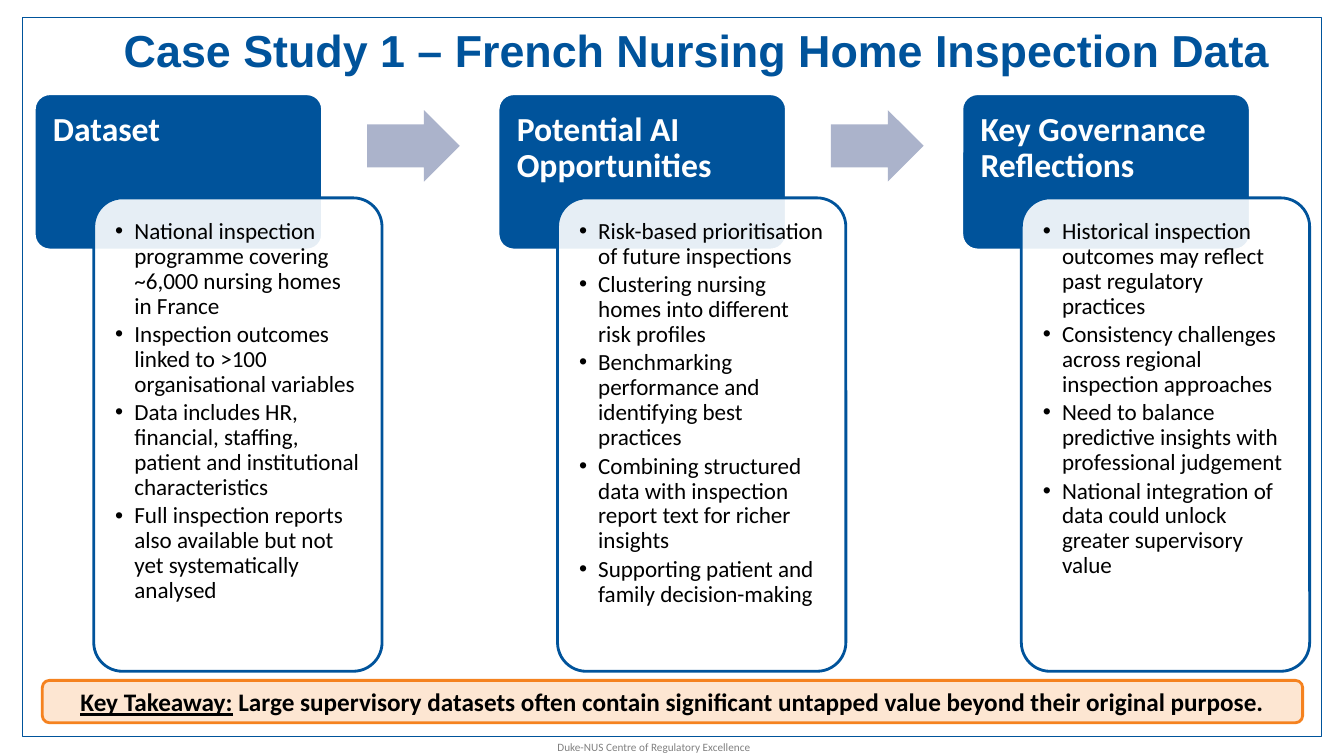
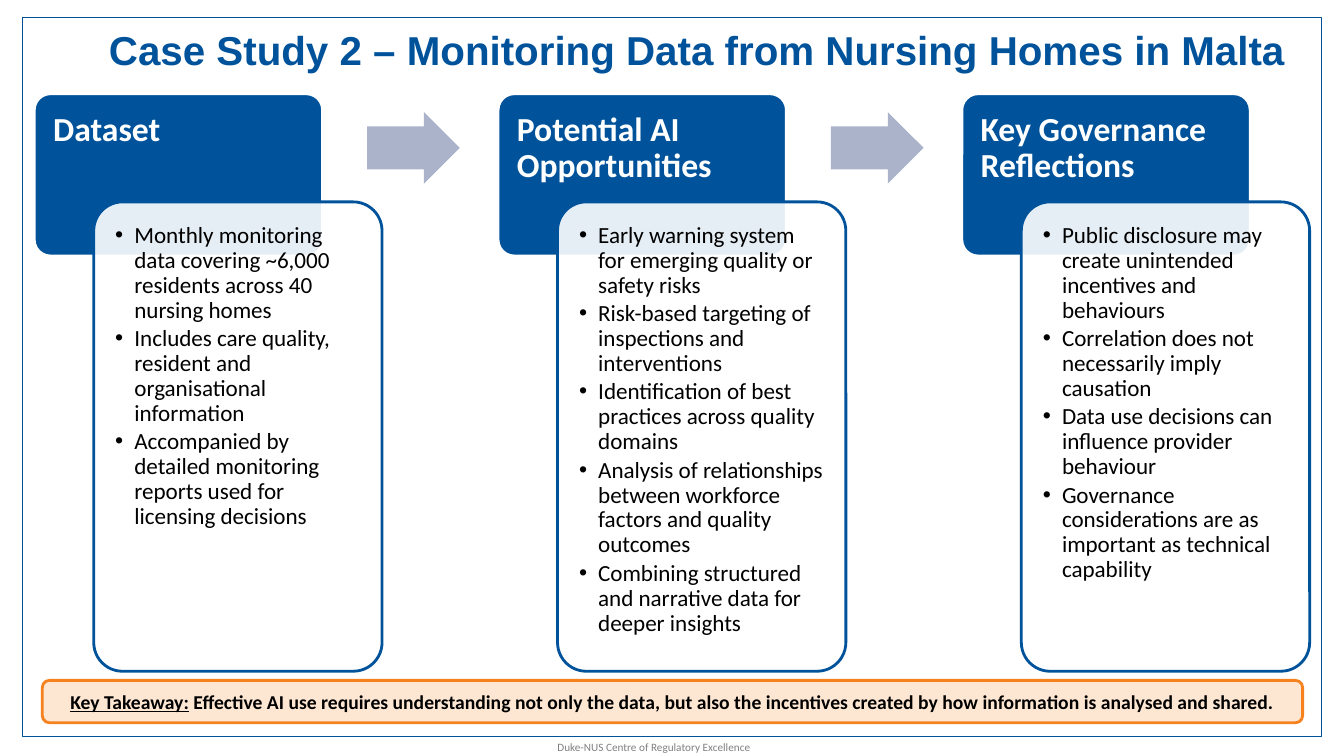
from dataclasses import dataclass

from lxml import etree
from pptx import Presentation
from pptx.dml.color import RGBColor
from pptx.enum.shapes import MSO_SHAPE
from pptx.enum.text import MSO_ANCHOR, PP_ALIGN
from pptx.oxml.ns import qn
from pptx.util import Inches, Pt

RECT, ROUND, ARROW = (MSO_SHAPE.RECTANGLE, MSO_SHAPE.ROUNDED_RECTANGLE,
                      MSO_SHAPE.RIGHT_ARROW)
TOP, MIDDLE = MSO_ANCHOR.TOP, MSO_ANCHOR.MIDDLE
LEFT, CENTER = PP_ALIGN.LEFT, PP_ALIGN.CENTER


@dataclass(frozen=True)
class Theme:
    blue: str = "00539B"
    white: str = "FFFFFF"
    black: str = "000000"
    gray: str = "808080"
    arrow: str = "ABB3CB"
    peach: str = "FDE6D2"
    orange: str = "F5821F"
    title_font: str = "Arial"
    font: str = "Calibri"
    head: float = 24
    body: float = 16.5
    foot: float = 8


T = Theme()
FOOTER = "Duke-NUS Centre of Regulatory Excellence"
LEAD = "Key Takeaway:"
HEADS = ["Dataset", "Potential AI Opportunities", "Key Governance Reflections"]

CASES = [
    {
        "title": "Case Study 1 – French Nursing Home Inspection Data",
        "title_size": 32,
        "head_height": 1.55,
        "points": [
            ["National inspection programme covering ~6,000 nursing homes in France",
             "Inspection outcomes linked to >100 organisational variables",
             "Data includes HR, financial, staffing, patient and institutional characteristics",
             "Full inspection reports also available but not yet systematically analysed"],
            ["Risk-based prioritisation of future inspections",
             "Clustering nursing homes into different risk profiles",
             "Benchmarking performance and identifying best practices",
             "Combining structured data with inspection report text for richer insights",
             "Supporting patient and family decision-making"],
            ["Historical inspection outcomes may reflect past regulatory practices",
             "Consistency challenges across regional inspection approaches",
             "Need to balance predictive insights with professional judgement",
             "National integration of data could unlock greater supervisory value"],
        ],
        "takeaway": "Large supervisory datasets often contain significant untapped "
                    "value beyond their original purpose.",
        "takeaway_size": 18,
    },
    {
        "title": "Case Study 2 – Monitoring Data from Nursing Homes in Malta",
        "title_size": 28.8,
        "head_height": 1.61,
        "points": [
            ["Monthly monitoring data covering ~6,000 residents across 40 nursing homes",
             "Includes care quality, resident and organisational information",
             "Accompanied by detailed monitoring reports used for licensing decisions"],
            ["Early warning system for emerging quality or safety risks",
             "Risk-based targeting of inspections and interventions",
             "Identification of best practices across quality domains",
             "Analysis of relationships between workforce factors and quality outcomes",
             "Combining structured and narrative data for deeper insights"],
            ["Public disclosure may create unintended incentives and behaviours",
             "Correlation does not necessarily imply causation",
             "Data use decisions can influence provider behaviour",
             "Governance considerations are as important as technical capability"],
        ],
        "takeaway": "Effective AI use requires understanding not only the data, but also "
                    "the incentives created by how information is analysed and shared.",
        "takeaway_size": 14,
    },
]

CARD_LEFT, CARD_TOP, CARD_BOTTOM = 0.34, 0.93, 6.66
CARD_WIDTH, PITCH, SHIFT = 2.86, 4.6, 0.59
ARROW_GAP, ARROW_WIDTH, ARROW_HEIGHT = 0.44, 0.92, 0.71
INDENT = 0.19


def rgb(code):
    return RGBColor.from_string(code)


def add_box(slide, kind, at, fill=None, line=None, width=2):
    box = slide.shapes.add_shape(kind, *map(Inches, at))
    box.shadow.inherit = False
    if fill:
        box.fill.solid()
        box.fill.fore_color.rgb = rgb(fill)
    else:
        box.fill.background()
    if line:
        box.line.color.rgb = rgb(line)
        box.line.width = Pt(width)
    else:
        box.line.fill.background()
    return box


def set_frame(shape, anchor, pads=None, wrap=True):
    """Set anchor, wrapping and (left, top, right, bottom) insets."""
    frame = shape.text_frame
    frame.word_wrap = wrap
    frame.vertical_anchor = anchor
    if pads:
        (frame.margin_left, frame.margin_top,
         frame.margin_right, frame.margin_bottom) = map(Inches, pads)
    return frame


def style(para, size, color, bold=False, align=LEFT, name=T.font):
    para.alignment = align
    font = para.font
    font.name, font.size, font.bold = name, Pt(size), bold
    font.color.rgb = rgb(color)


def add_label(slide, text, at, anchor, wrap, **look):
    box = slide.shapes.add_textbox(*map(Inches, at))
    para = set_frame(box, anchor, wrap=wrap).paragraphs[0]
    para.text = text
    style(para, **look)


def set_alpha(shape, percent):
    color = shape.fill._xPr.find(qn("a:solidFill"))[0]
    etree.SubElement(color, qn("a:alpha")).set("val", str(percent * 1000))


def add_bullet(para):
    props = para._p.get_or_add_pPr()
    props.set("marL", str(Inches(INDENT)))
    props.set("indent", str(-Inches(INDENT)))
    etree.SubElement(props, qn("a:buFont")).set("typeface", "Arial")
    etree.SubElement(props, qn("a:buChar")).set("char", "•")


def add_base(slide, title, size):
    """Draw the border, footer and title shared by all slides."""
    add_box(slide, RECT, (0.22, 0.17, 12.89, 7.14), line=T.blue, width=0.75)
    add_label(slide, FOOTER, (5.43, 7.3, 2.14, 0.24), TOP, False,
              size=T.foot, color=T.gray)
    add_label(slide, title, (0.5, 0.16, 12.83, 0.67), MIDDLE, True, size=size,
              color=T.blue, bold=True, align=CENTER, name=T.title_font)


def add_card(slide, left, height, head, points):
    """Draw a heading block with its bullet panel overlapping the lower third."""
    block = add_box(slide, ROUND, (left, CARD_TOP, CARD_WIDTH, height), T.blue, T.white)
    block.adjustments[0] = 0.1
    para = set_frame(block, TOP, (0.14, 0.14, 0.14, 0.1)).paragraphs[0]
    para.text = head
    para.line_spacing = 0.9
    style(para, T.head, T.white, bold=True)

    top = CARD_TOP + height * 2 / 3
    panel = add_box(slide, ROUND, (left + SHIFT, top, CARD_WIDTH, CARD_BOTTOM - top),
                    T.white, T.blue)
    panel.adjustments[0] = 0.1
    set_alpha(panel, 90)
    frame = set_frame(panel, TOP, (0.13,) * 4)
    for i, point in enumerate(points):
        para = frame.add_paragraph() if i else frame.paragraphs[0]
        para.text = point
        para.line_spacing = 0.9
        para.space_after = Pt(2.5)
        add_bullet(para)
        style(para, T.body, T.black)


def add_arrow(slide, left, height):
    top = CARD_TOP + height / 3 - ARROW_HEIGHT / 2
    arrow = add_box(slide, ARROW, (left, top, ARROW_WIDTH, ARROW_HEIGHT), T.arrow)
    arrow.adjustments[0] = 0.6
    arrow.adjustments[1] = 0.5


def add_takeaway(slide, text, size):
    bar = add_box(slide, ROUND, (0.42, 6.75, 12.5, 0.42), T.peach, T.orange)
    para = set_frame(bar, MIDDLE).paragraphs[0]
    lead = para.add_run()
    lead.text = LEAD
    lead.font.underline = True
    para.add_run().text = " " + text
    style(para, size, T.black, bold=True, align=CENTER)


def main():
    deck = Presentation()
    deck.slide_width, deck.slide_height = Inches(13.33), Inches(7.5)
    for case in CASES:
        slide = deck.slides.add_slide(deck.slide_layouts[6])
        height = case["head_height"]
        add_base(slide, case["title"], case["title_size"])
        for i, (head, points) in enumerate(zip(HEADS, case["points"])):
            left = CARD_LEFT + i * PITCH
            add_card(slide, left, height, head, points)
            if i < len(HEADS) - 1:
                add_arrow(slide, left + CARD_WIDTH + ARROW_GAP, height)
        add_takeaway(slide, case["takeaway"], case["takeaway_size"])
    deck.save("out.pptx")


if __name__ == "__main__":
    main()
